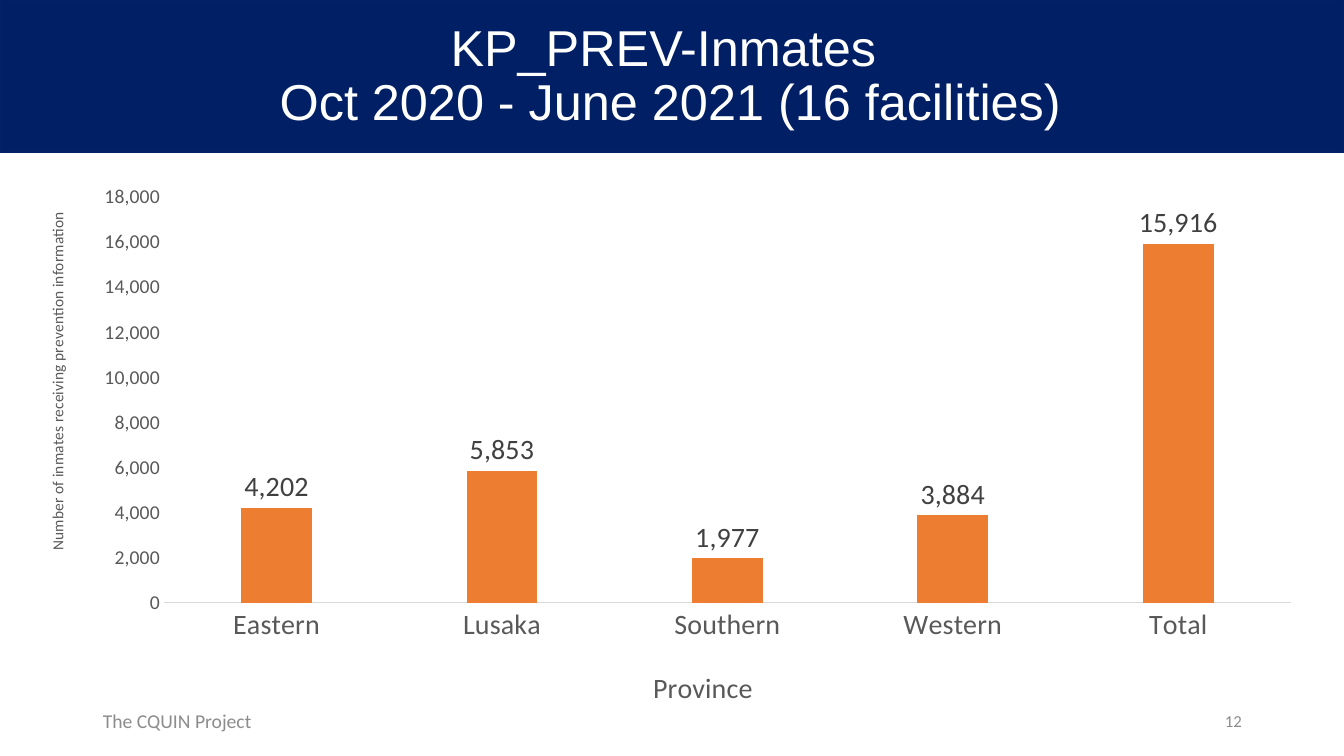
from lxml import etree
from pptx import Presentation
from pptx.chart.data import CategoryChartData
from pptx.dml.color import RGBColor
from pptx.enum.chart import XL_CHART_TYPE, XL_LABEL_POSITION, XL_TICK_MARK
from pptx.enum.shapes import MSO_SHAPE
from pptx.enum.text import MSO_ANCHOR, MSO_AUTO_SIZE, PP_ALIGN
from pptx.oxml.ns import qn
from pptx.util import Emu, Pt

COLUMNS = XL_CHART_TYPE.COLUMN_CLUSTERED
OUTSIDE = XL_LABEL_POSITION.OUTSIDE_END
NO_TICK = XL_TICK_MARK.NONE
RECT = MSO_SHAPE.RECTANGLE
MIDDLE = MSO_ANCHOR.MIDDLE
NO_FIT = MSO_AUTO_SIZE.NONE
LEFT, CENTER, RIGHT = PP_ALIGN.LEFT, PP_ALIGN.CENTER, PP_ALIGN.RIGHT
TITLE_ONLY = 5


def px(n):
    return Emu(round(n * 914400 / 100.8))


def rgb(color):
    return RGBColor.from_string(color)


class Deck:
    """Holds the style and the current slide, and adds elements to it."""

    navy, edge, white = "001F64", "022169", "FFFFFF"
    orange, gray, dark = "ED7D31", "595959", "404040"
    pale, rule = "8C8C8C", "D9D9D9"
    head, body = "Arial", "Calibri"

    def __init__(self, width, height):
        self.prs = Presentation()
        self.prs.slide_width, self.prs.slide_height = px(width), px(height)
        self.s = self.prs.slides.add_slide(self.prs.slide_layouts[TITLE_ONLY])

    def font(self, font, size, color, name=None):
        font.size, font.bold, font.name = Pt(size), False, name or self.body
        font.color.rgb = rgb(color)

    def fill_text(self, sp, text, size, color, name, align):
        tf = sp.text_frame
        tf.word_wrap, tf.auto_size, tf.vertical_anchor = True, NO_FIT, MIDDLE
        p = tf.paragraphs[0]
        p.text, p.alignment = text, align
        self.font(p.font, size, color, name)
        return p

    def band(self, x, y, w, h):
        sp = self.s.shapes.add_shape(RECT, px(x), px(y), px(w), px(h))
        sp.shadow.inherit = False
        sp.fill.solid()
        sp.fill.fore_color.rgb = rgb(self.navy)
        sp.line.color.rgb, sp.line.width = rgb(self.edge), Pt(1)

    def title(self, text, x, y, w, h):
        sp = self.s.shapes.title
        sp.left, sp.top, sp.width, sp.height = px(x), px(y), px(w), px(h)
        p = self.fill_text(sp, text, 36, self.white, self.head, CENTER)
        p.line_spacing = 0.9
        sp.element.getparent().append(sp.element)

    def text(self, text, size, align, x, y, w, h):
        sp = self.s.shapes.add_textbox(px(x), px(y), px(w), px(h))
        self.fill_text(sp, text, size, self.pale, self.body, align)

    def layout(self, parent, **values):
        old = parent.find(qn("c:layout"))
        if old is not None:
            parent.remove(old)
        layout = etree.Element(qn("c:layout"))
        manual = etree.SubElement(layout, qn("c:manualLayout"))
        for tag, value in values.items():
            etree.SubElement(manual, qn("c:" + tag)).set("val", str(value))
        tx = parent.find(qn("c:tx"))
        if tx is None:
            parent.insert(0, layout)
        else:
            tx.addnext(layout)

    def axis(self, axis, title, title_size, tick_size, x, y):
        axis.has_major_gridlines = False
        axis.major_tick_mark = axis.minor_tick_mark = NO_TICK
        self.font(axis.tick_labels.font, tick_size, self.gray)
        p = axis.axis_title.text_frame.paragraphs[0]
        p.text = title
        self.font(p.font, title_size, self.gray)
        self.layout(axis.axis_title._element, xMode="edge", yMode="edge", x=x, y=y)

    def columns(self, cats, vals, x, y, w, h):
        data = CategoryChartData(number_format="#,##0")
        data.categories = cats
        data.add_series("Series 1", vals)
        frame = self.s.shapes.add_chart(COLUMNS, px(x), px(y), px(w), px(h), data)
        chart = frame.chart
        chart.has_legend = chart.has_title = False
        self.font(chart.font, 20, "000000")

        cat, val = chart.category_axis, chart.value_axis
        self.axis(cat, "Province", 20, 20, 616 / w, 490 / h)
        cat.format.line.color.rgb, cat.format.line.width = rgb(self.rule), Pt(0.75)
        self.axis(val, "Number of inmates receiving prevention information",
                  11, 14, 12 / w, 36 / h)
        val.format.line.fill.background()
        val.minimum_scale, val.maximum_scale, val.major_unit = 0, 18000, 2000
        val.tick_labels.number_format = "#,##0"
        val.tick_labels.number_format_is_linked = False

        plot = chart.plots[0]
        plot.gap_width, plot.overlap, plot.vary_by_categories = 219, -27, False
        fill = plot.series[0].format.fill
        fill.solid()
        fill.fore_color.rgb = rgb(self.orange)
        labels = plot.series[0].data_labels
        labels.show_value, labels.position = True, OUTSIDE
        labels.number_format, labels.number_format_is_linked = "#,##0", False
        self.font(labels.font, 20, self.dark)
        area = chart._chartSpace.find(".//" + qn("c:plotArea"))
        self.layout(area, layoutTarget="inner", xMode="edge", yMode="edge",
                    x=132 / w, y=24 / h, w=1127 / w, h=406 / h)


def main():
    deck = Deck(1344, 756)
    deck.band(0, 0, 1344, 152)
    deck.text("The CQUIN Project", 14, LEFT, 93, 701, 302, 40)
    deck.text("12", 12, RIGHT, 950, 701, 302, 40)
    deck.title("KP_PREV-Inmates \vOct 2020 - June 2021 (16 facilities)",
               91, 35, 1159, 84)
    deck.columns(["Eastern", "Lusaka", "Southern", "Western", "Total"],
                 [4202, 5853, 1977, 3884, 15916], 32, 173, 1285, 548)
    deck.prs.save("out.pptx")


if __name__ == "__main__":
    main()
